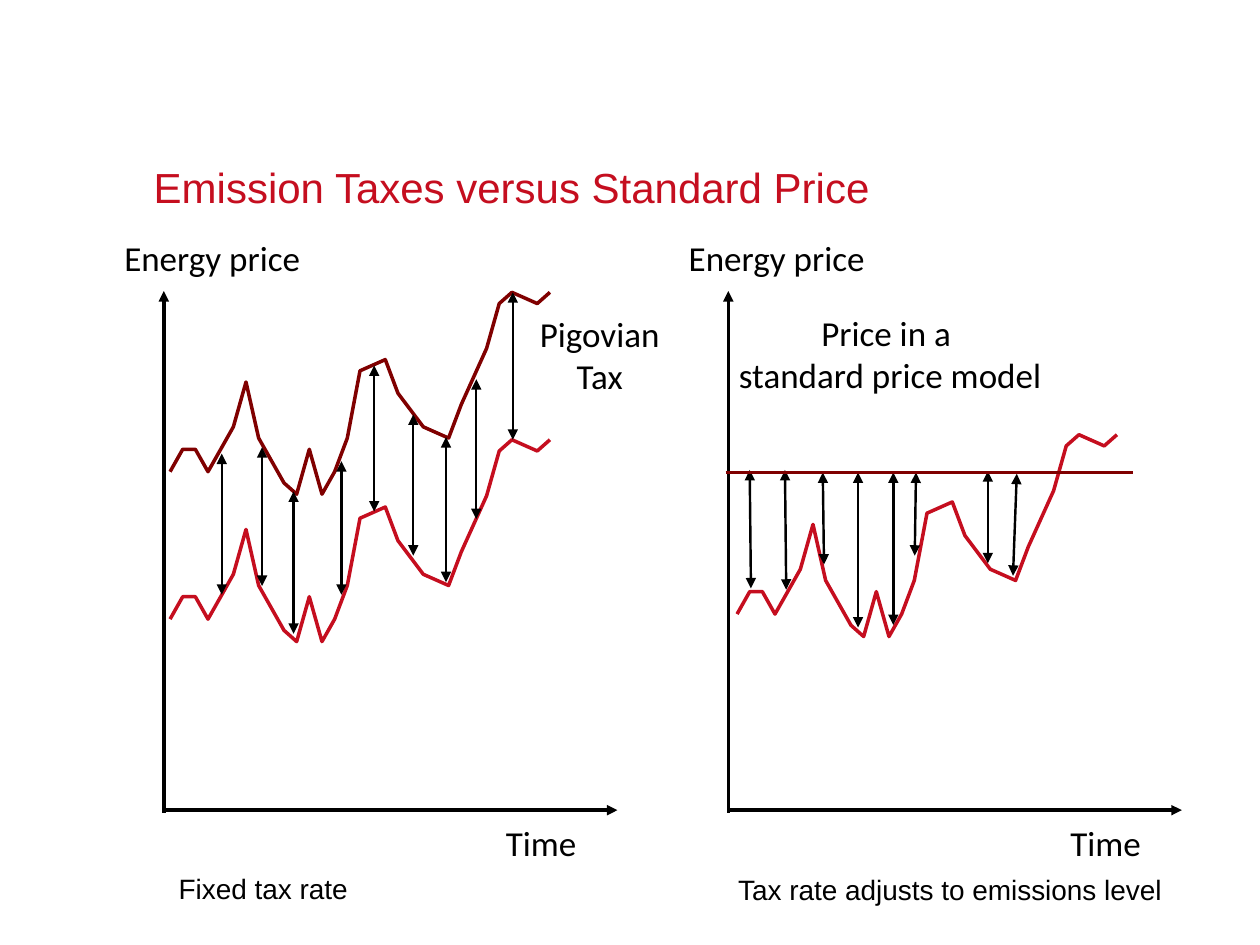
import pptx
import pptx.util
import pptx.dml.color
import pptx.enum.shapes
import pptx.enum.text
import pptx.oxml.ns
from lxml import etree
from pptx.util import Inches

COLORS = {"title": "C50E1F", "base": "C50E1F", "taxed": "800000", "ink": "000000"}
PANEL_SHIFT = 4.48
STEP, LEVEL = 0.1005, 0.089
PRICE_CURVE = [
    (0, 16), (1, 14), (2, 14), (3, 16), (4, 14), (5, 12), (6, 8), (7, 13), (9, 17),
    (10, 18), (11, 14), (12, 18), (13, 16), (14, 13), (15, 7), (17, 6), (18, 9),
    (20, 12), (22, 13), (23, 10), (25, 5), (26, 1), (27, 0), (29, 1), (30, 0),
]
TAX_GAPS = [
    (1.76, 3.6, 4.72), (2.08, 3.55, 4.65), (2.33, 3.9, 5.03), (2.71, 3.66, 4.72),
    (2.97, 2.9, 4.06), (3.28, 3.29, 4.41), (3.54, 3.47, 4.62), (3.78, 3.01, 4.12),
    (4.07, 2.32, 3.49),
]
STANDARD_GAPS = [
    (5.95, 3.73, 5.96, 4.67), (6.23, 3.73, 6.24, 4.68), (6.53, 3.75, 6.54, 4.48),
    (6.81, 3.75, 6.81, 4.98), (7.09, 3.75, 7.09, 4.96), (7.27, 3.75, 7.26, 4.41),
    (7.84, 3.74, 7.84, 4.47), (8.07, 3.76, 8.04, 4.57),
]


def rgb(name):
    """Return the named colour."""
    return pptx.dml.color.RGBColor.from_string(COLORS[name])


def style_text(frame, size, font, color, align):
    """Format every paragraph and run of a text frame."""
    for para in frame.paragraphs:
        para.alignment = align
        for span in para.runs:
            span.font.size = pptx.util.Pt(size)
            span.font.name = font
            span.font.color.rgb = rgb(color)


def clear_margins(frame):
    """Remove the insets of a text frame."""
    frame.margin_left = frame.margin_right = 0
    frame.margin_top = frame.margin_bottom = 0


def set_title(page, text):
    """Place and format the title."""
    title = page.shapes.title
    title.left, title.top = Inches(1.22), Inches(0.71)
    title.width, title.height = Inches(7.57), Inches(0.97)
    frame = title.text_frame
    frame.text = text
    clear_margins(frame)
    frame.auto_size = pptx.enum.text.MSO_AUTO_SIZE.SHAPE_TO_FIT_TEXT
    frame.vertical_anchor = pptx.enum.text.MSO_ANCHOR.BOTTOM
    frame.paragraphs[0].line_spacing = pptx.util.Pt(30)
    style_text(frame, 24, "Arial", "title", pptx.enum.text.PP_ALIGN.LEFT)


def add_text(page, text, left, top, width, height):
    """Add a text box that fits its text and return its frame."""
    box = page.shapes.add_textbox(Inches(left), Inches(top), Inches(width), Inches(height))
    frame = box.text_frame
    frame.text = text
    frame.auto_size = pptx.enum.text.MSO_AUTO_SIZE.SHAPE_TO_FIT_TEXT
    return frame


def add_label(page, text, left, top, width, height=0.34):
    """Add a centred chart label without margins."""
    frame = add_text(page, text, left, top, width, height)
    frame.word_wrap = False
    clear_margins(frame)
    style_text(frame, 20, "Calibri", "ink", pptx.enum.text.PP_ALIGN.CENTER)


def add_caption(page, text, left, top, width):
    """Add a caption below a panel."""
    frame = add_text(page, text, left, top, width, 0.37)
    frame.word_wrap = True
    style_text(frame, 16, "Arial", "ink", pptx.enum.text.PP_ALIGN.LEFT)


def add_line(page, start, end, weight, color="ink", heads=()):
    """Add a straight line with triangles at the given ends."""
    line = page.shapes.add_connector(
        pptx.enum.shapes.MSO_CONNECTOR.STRAIGHT, *map(Inches, (*start, *end)))
    line.line.width = pptx.util.Pt(weight)
    line.line.color.rgb = rgb(color)
    outline = line.line._get_or_add_ln()
    for head in heads:
        etree.SubElement(outline, pptx.oxml.ns.qn(f"a:{head}"), type="triangle")
    etree.SubElement(line._element.spPr, pptx.oxml.ns.qn("a:effectLst"))


def add_gap(page, start, end):
    """Add a double-headed arrow between two prices."""
    add_line(page, start, end, 1.38, heads=("headEnd", "tailEnd"))


def add_curve(page, left, top, color):
    """Draw the price curve from its top-left corner."""
    points = [(Inches(left + step * STEP), Inches(top + level * LEVEL))
              for step, level in PRICE_CURVE]
    builder = page.shapes.build_freeform(*points[0])
    builder.add_line_segments(points[1:], close=False)
    curve = builder.convert_to_shape()
    curve.shadow.inherit = False
    curve.fill.background()
    curve.line.color.rgb = rgb(color)
    curve.line.width = pptx.util.Pt(2)


def add_axes(page, shift):
    """Draw the axes of a panel and their labels."""
    origin = 1.3 + shift
    add_line(page, (origin, 6.43), (origin + 3.6, 6.43), 2, heads=("tailEnd",))
    add_line(page, (origin, 6.45), (origin, 2.31), 2, heads=("tailEnd",))
    add_label(page, "Energy price", 0.98 + shift, 1.88, 1.41)
    add_label(page, "Time", 4.01 + shift, 6.52, 0.57)


def add_tax_panel(page):
    """Draw the panel with a fixed tax rate."""
    add_axes(page, 0)
    add_curve(page, 1.35, 3.49, "base")
    add_curve(page, 1.35, 2.32, "taxed")
    for x, top, bottom in TAX_GAPS:
        add_gap(page, (x, top), (x, bottom))
    add_label(page, "Pigovian\nTax", 4.28, 2.48, 0.96, 0.67)
    add_caption(page, "Fixed tax rate", 1.32, 6.87, 2.91)


def add_standard_panel(page):
    """Draw the panel with a standard price."""
    add_axes(page, PANEL_SHIFT)
    add_curve(page, 5.85, 3.45, "base")
    for x, top, end, bottom in STANDARD_GAPS:
        add_gap(page, (x, top), (end, bottom))
    add_line(page, (5.76, 3.75), (8.99, 3.75), 2, "taxed")
    add_label(page, "Price in a \vstandard price model", 5.85, 2.47, 2.43, 0.67)
    add_caption(page, "Tax rate adjusts to emissions level", 5.76, 6.88, 3.78)


def main():
    """Build and save the slide."""
    deck = pptx.Presentation()
    deck.slide_width, deck.slide_height = Inches(10), Inches(7.5)
    page = deck.slides.add_slide(deck.slide_layouts[5])
    set_title(page, "Emission Taxes versus Standard Price")
    add_tax_panel(page)
    add_standard_panel(page)
    deck.save("out.pptx")


if __name__ == "__main__":
    main()
